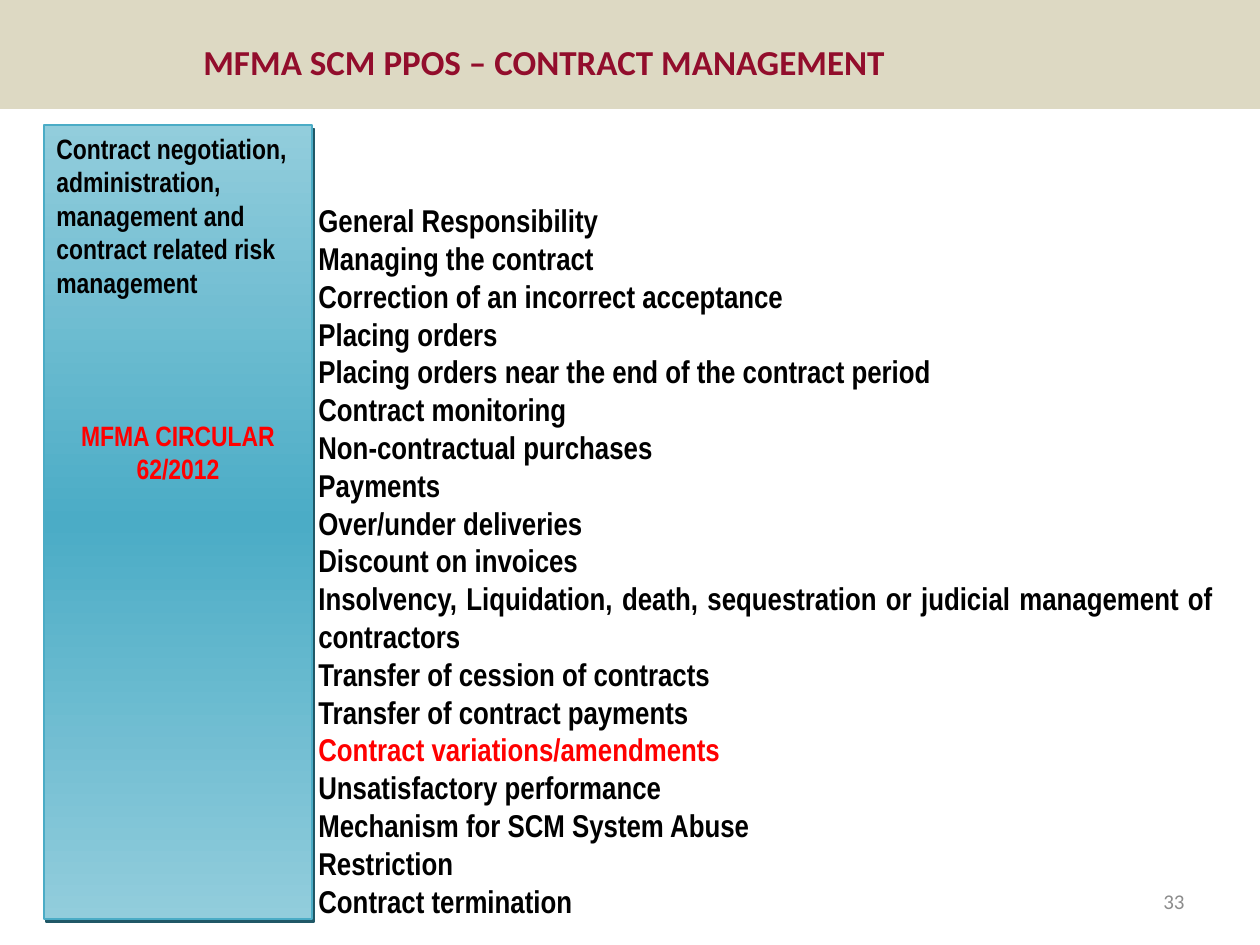
from copy import deepcopy

from lxml.etree import SubElement
from pptx import Presentation
from pptx.dml.color import RGBColor
from pptx.enum.shapes import MSO_SHAPE
from pptx.enum.text import MSO_ANCHOR, PP_ALIGN
from pptx.oxml.ns import qn
from pptx.util import Pt

SCALE = 914400 / 126
BLACK, RED = "000000", "FF0000"


def px(n):
    return round(n * SCALE)


def write(p, text, size, font, color, bold=True, **paragraph):
    for name, value in paragraph.items():
        setattr(p, name, value)
    r = p.add_run()
    r.text = text
    for name, value in {"size": Pt(size), "name": font, "bold": bold}.items():
        setattr(r.font, name, value)
    r.font.color.rgb = RGBColor.from_string(color)


prs = Presentation()
prs.slide_width, prs.slide_height = px(1260), px(945)
slide = prs.slides.add_slide(prs.slide_layouts[6])

band = slide.shapes.add_shape(MSO_SHAPE.RECTANGLE, 0, 0, px(1260), px(109))
band.shadow.inherit = False
band.fill.solid()
band.fill.fore_color.rgb = RGBColor.from_string("DDD9C3")
band.line.fill.background()

labels = [
    ((191, 27, 765, 69), "MFMA SCM PPOS – CONTRACT MANAGEMENT", 20, "920D2C", True, PP_ALIGN.LEFT),
    ((903, 876, 294, 50), "33", 12, "8C8C8C", False, PP_ALIGN.RIGHT),
]
for box, text, size, color, bold, align in labels:
    tf = slide.shapes.add_textbox(*map(px, box)).text_frame
    tf.word_wrap = True
    tf.vertical_anchor = MSO_ANCHOR.MIDDLE
    write(tf.paragraphs[0], text, size, "Calibri", color, bold, alignment=align)

topics = [
    "General Responsibility",
    "Managing the contract",
    "Correction of an incorrect acceptance",
    "Placing orders",
    "Placing orders near the end of the contract period",
    "Contract monitoring",
    "Non-contractual purchases",
    "Payments",
    "Over/under deliveries",
    "Discount on invoices",
    "Insolvency, Liquidation, death, sequestration or judicial management of contractors",
    "Transfer of cession of contracts",
    "Transfer of contract payments",
    "Contract variations/amendments",
    "Unsatisfactory performance",
    "Mechanism for SCM System Abuse",
    "Restriction",
    "Contract termination",
]
tf = slide.shapes.add_textbox(px(243), px(195), px(983), px(738)).text_frame
tf.word_wrap = True
for i, topic in enumerate(topics):
    p = tf.add_paragraph() if i else tf.paragraphs[0]
    color = RED if topic == "Contract variations/amendments" else BLACK
    write(p, topic, 18, "Arial Narrow", color, alignment=PP_ALIGN.JUSTIFY, level=1)
    pPr = p._p.get_or_add_pPr()
    pPr.set("marL", str(px(63)))
    pPr.set("indent", "0")

sidebar = slide.shapes.add_shape(MSO_SHAPE.RECTANGLE, px(44), px(125), px(268), px(794))
sidebar.fill.gradient()
sidebar.fill.gradient_angle = 270
stop_list = sidebar._element.spPr.find(".//" + qn("a:gsLst"))
stop_list.append(deepcopy(stop_list[0]))
for stop, (position, color) in zip(
    sidebar.fill.gradient_stops, [(0, "92CDDC"), (0.5, "4BACC6"), (1, "92CDDC")]
):
    stop.position = position
    stop.color.rgb = RGBColor.from_string(color)
sidebar.line.color.rgb = RGBColor.from_string("4BACC6")
sidebar.line.width = Pt(1)

sidebar.shadow.inherit = False
effects = sidebar._element.spPr.find(qn("a:effectLst"))
shadow = SubElement(effects, qn("a:outerShdw"), blurRad="0", dist=str(Pt(2.2)),
                    dir=str(63 * 60000), algn="ctr", rotWithShape="0")
SubElement(shadow, qn("a:srgbClr"), val="205867")

tf = sidebar.text_frame
tf.word_wrap = True
tf.vertical_anchor = MSO_ANCHOR.TOP
write(tf.paragraphs[0],
      "Contract negotiation, administration, management and contract related risk management",
      16, "Arial Narrow", BLACK, alignment=PP_ALIGN.LEFT, space_after=Pt(10))
write(tf.add_paragraph(), "MFMA CIRCULAR 62/2012", 16, "Arial Narrow", RED,
      alignment=PP_ALIGN.CENTER, space_before=Pt(58), space_after=Pt(10))

prs.save("out.pptx")
